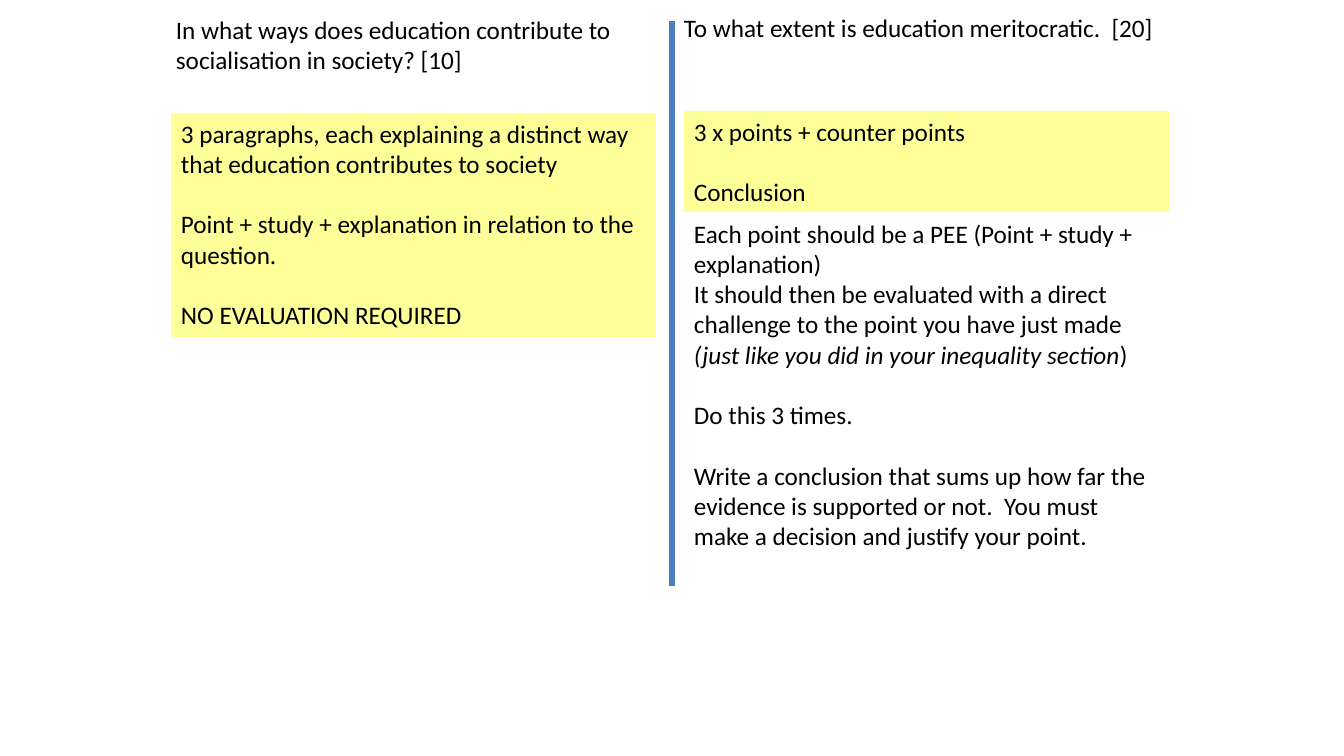
from pptx import Presentation
from pptx.dml.color import RGBColor
from pptx.enum.shapes import MSO_CONNECTOR, MSO_SHAPE
from pptx.enum.text import MSO_ANCHOR, PP_ALIGN
from pptx.oxml.ns import qn
from pptx.util import Pt

PX = 914400 / 100.8
COLORS = {"text": "000000", "panel": "FFFF99", "divider": "4B7EBC"}
FONT, SIZE, GAP = "Calibri", 18, 21.6

# Content: each box is a list of blocks, each block a list of paragraphs,
# each paragraph a list of (text, italic) runs
LEFT_QUESTION = [
    [[("In what ways does education contribute to socialisation in society? [10]", False)]],
]
RIGHT_QUESTION = [
    [[("To what extent is education meritocratic.  [20]", False)]],
]
LEFT_PLAN = [
    [[("3 paragraphs, each explaining a distinct way that education contributes to society", False)]],
    [[("Point + study + explanation in relation to the question.", False)]],
    [[("NO EVALUATION REQUIRED", False)]],
]
RIGHT_PLAN = [
    [[("3 x points + counter points", False)]],
    [[("Conclusion", False)]],
]
RIGHT_ADVICE = [
    [
        [("Each point should be a PEE (Point + study + explanation)", False)],
        [("It should then be evaluated with a direct challenge to the point you have just made", False)],
        [("(just like you did in your inequality section", True), (")", False)],
    ],
    [[("Do this 3 times.", False)]],
    [[("Write a conclusion that sums up how far the evidence is supported or not.  "
       "You must make a decision and justify your point.", False)]],
]

# Boxes: content, left, top, width, height in px, fill
BOXES = [
    (LEFT_QUESTION, 166, 9, 504, 71, None),
    (RIGHT_QUESTION, 674, 7, 504, 41, None),
    (LEFT_PLAN, 171, 113, 485, 224, "panel"),
    (RIGHT_PLAN, 684, 111, 485, 101, "panel"),
    (RIGHT_ADVICE, 684, 213, 485, 346, None),
]
DIVIDER = (672, 21, 672, 586)


def px(*values):
    return [round(v * PX) for v in values]


def color(name):
    return RGBColor.from_string(COLORS[name])


def write_blocks(tf, blocks):
    tf.word_wrap = True
    tf.vertical_anchor = MSO_ANCHOR.TOP
    p = None
    for b, block in enumerate(blocks):
        for i, runs in enumerate(block):
            p = tf.add_paragraph() if p is not None else tf.paragraphs[0]
            p.alignment = PP_ALIGN.LEFT
            if b and not i:
                p.space_before = Pt(GAP)
            for text, italic in runs:
                r = p.add_run()
                r.text = text
                r.font.name, r.font.size = FONT, Pt(SIZE)
                r.font.italic = italic
                r.font.color.rgb = color("text")


def add_box(s, blocks, left, top, width, height, fill):
    place = px(left, top, width, height)
    if fill:
        sp = s.shapes.add_shape(MSO_SHAPE.RECTANGLE, *place)
        sp.shadow.inherit = False
        sp.fill.solid()
        sp.fill.fore_color.rgb = color(fill)
        sp.line.fill.background()
    else:
        sp = s.shapes.add_textbox(*place)
    write_blocks(sp.text_frame, blocks)


def main():
    prs = Presentation()
    prs.slide_width, prs.slide_height = px(1344, 756)
    s = prs.slides.add_slide(prs.slide_layouts[6])

    # Divider between the two questions
    line = s.shapes.add_connector(MSO_CONNECTOR.STRAIGHT, *px(*DIVIDER))
    line.line.color.rgb = color("divider")
    line.line.width = Pt(4.5)
    sp_pr = line._element.spPr
    sp_pr.append(sp_pr.makeelement(qn("a:effectLst"), {}))

    # Questions, plans and advice
    for box in BOXES:
        add_box(s, *box)

    prs.save("out.pptx")


if __name__ == "__main__":
    main()
